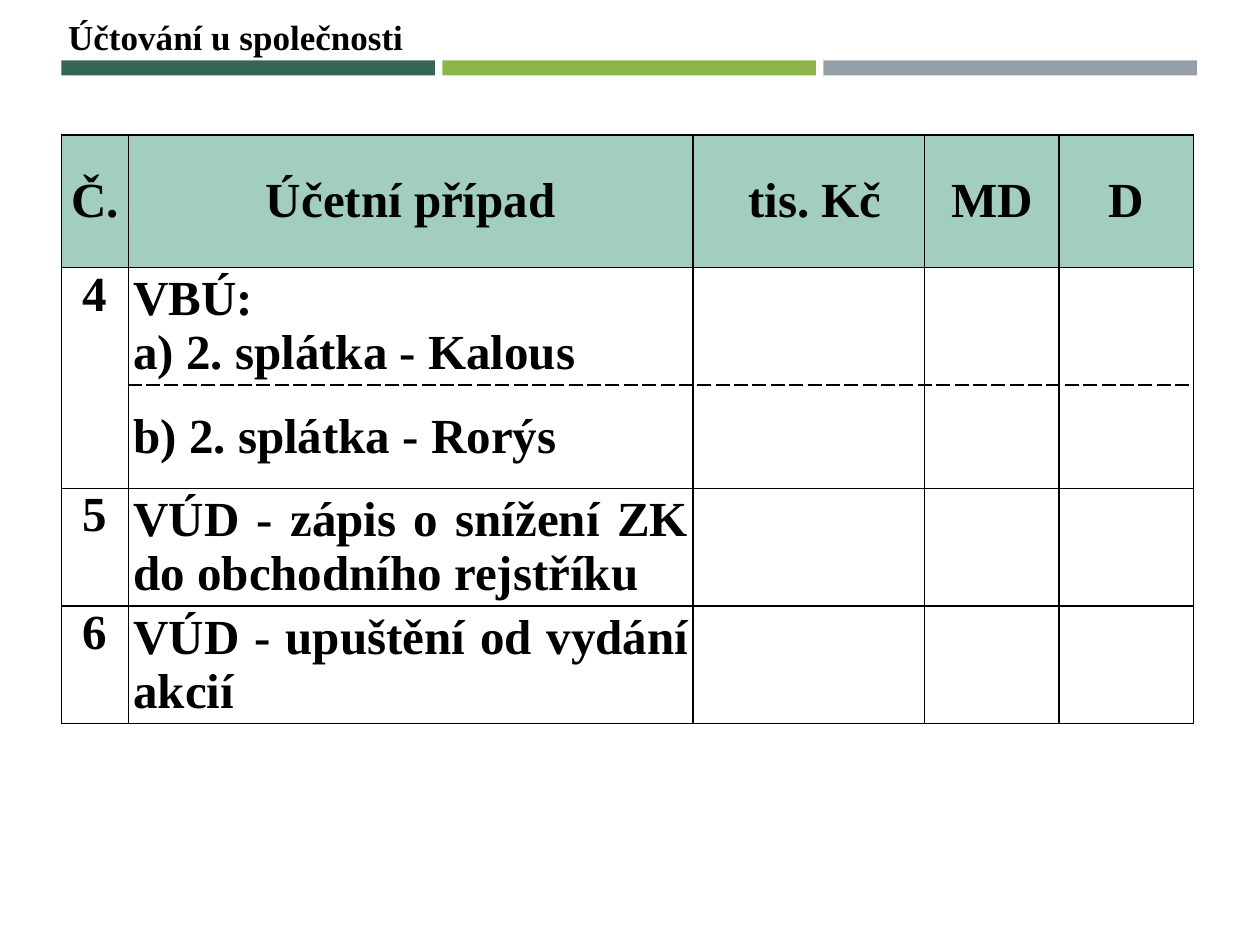
from dataclasses import dataclass
from typing import Optional

from lxml.etree import SubElement
from pptx import Presentation
from pptx.dml.color import RGBColor
from pptx.enum.shapes import MSO_SHAPE as Shape
from pptx.enum.text import MSO_ANCHOR as Anchor, MSO_AUTO_SIZE as AutoSize, PP_ALIGN as Align
from pptx.oxml.ns import qn
from pptx.util import Cm, Pt


@dataclass(frozen=True)
class Theme:
    """Colours, font and type sizes of the page."""
    font: str = "Times New Roman"
    ink: str = "000000"
    header: str = "A2CEC1"
    bars: tuple = ("366658", "8CB64A", "969FA7")
    title_size: int = 20
    table_size: int = 28
    border: int = 1


@dataclass(frozen=True)
class Row:
    """One table row: its height in cm, its texts and its dashed edges."""
    height: float
    texts: tuple
    header: bool = False
    dashed: Optional[str] = None


THEME = Theme()
COLUMNS = (1.35, 11.38, 4.67, 2.71, 2.71)
ROWS = (
    Row(2.67, ("Č.", "Účetní případ", " tis. Kč", "MD", "D"), header=True),
    Row(2.37, ("4", "VBÚ:\na) 2. splátka - Kalous", "", "", ""), dashed="lnB"),
    Row(2.08, ("", "b) 2. splátka - Rorýs", "", "", ""), dashed="lnT"),
    Row(2.37, ("5", "VÚD - zápis o snížení ZK do obchodního rejstříku", "", "", "")),
    Row(2.37, ("6", "VÚD - upuštění od vydání akcií ", "", "", "")),
)
LEFT = 1.24


def style_para(para, size: int, align: Align) -> None:
    """Give a paragraph the bold face of the theme."""
    para.alignment = align
    para.font.name = THEME.font
    para.font.size = Pt(size)
    para.font.bold = True
    para.font.color.rgb = RGBColor.from_string(THEME.ink)


def draw_bars(page) -> None:
    """Draw the row of coloured bars below the title."""
    for index, colour in enumerate(THEME.bars):
        bar = page.shapes.add_shape(
            Shape.RECTANGLE, Cm(LEFT + index * 7.68), Cm(1.22), Cm(7.53), Cm(0.3))
        bar.shadow.inherit = False
        bar.fill.solid()
        bar.fill.fore_color.rgb = RGBColor.from_string(colour)
        bar.line.fill.background()


def write_title(page, text: str) -> None:
    """Place and format the title placeholder."""
    title = page.shapes.title
    title.left, title.top, title.width, title.height = Cm(1.12), Cm(0.18), Cm(7.32), Cm(1.12)
    frame = title.text_frame
    frame.text = text
    frame.word_wrap = False
    frame.auto_size = AutoSize.SHAPE_TO_FIT_TEXT
    frame.vertical_anchor = Anchor.TOP
    style_para(frame.paragraphs[0], THEME.title_size, Align.LEFT)


def draw_borders(cell, dashed: Optional[str]) -> None:
    """Draw the four cell edges, with at most one of them dashed."""
    properties = cell._tc.get_or_add_tcPr()
    for edge in ("lnL", "lnR", "lnT", "lnB"):
        line = SubElement(properties, qn(f"a:{edge}"), w=str(Pt(THEME.border)))
        fill = SubElement(line, qn("a:solidFill"))
        SubElement(fill, qn("a:srgbClr"), val=THEME.ink)
        SubElement(line, qn("a:prstDash"), val="dash" if edge == dashed else "solid")


def fill_cell(cell, row: Row, column: int) -> None:
    """Write and format one table cell."""
    cell.text = row.texts[column]
    cell.margin_left = cell.margin_right = Cm(0.1)
    cell.margin_top = cell.margin_bottom = 0
    numbering = column == 0 and not row.header
    cell.vertical_anchor = Anchor.TOP if numbering else Anchor.MIDDLE
    align = Align.JUSTIFY if column == 1 and not row.header else Align.CENTER
    for para in cell.text_frame.paragraphs:
        style_para(para, THEME.table_size, align)
    draw_borders(cell, row.dashed if column else None)
    if row.header:
        cell.fill.solid()
        cell.fill.fore_color.rgb = RGBColor.from_string(THEME.header)
    else:
        cell.fill.background()


def draw_table(page) -> None:
    """Draw the table of accounting entries."""
    table = page.shapes.add_table(
        len(ROWS), len(COLUMNS), Cm(LEFT), Cm(2.72),
        Cm(sum(COLUMNS)), Cm(sum(row.height for row in ROWS))).table
    table.first_row = table.horz_banding = False
    for column, width in enumerate(COLUMNS):
        table.columns[column].width = Cm(width)
    for index, row in enumerate(ROWS):
        table.rows[index].height = Cm(row.height)
        for column in range(len(COLUMNS)):
            fill_cell(table.cell(index, column), row, column)
    table.cell(1, 0).merge(table.cell(2, 0))


def main() -> None:
    """Build the deck and save it."""
    deck = Presentation()
    deck.slide_width, deck.slide_height = Cm(25.4), Cm(19.05)
    page = deck.slides.add_slide(deck.slide_layouts[5])
    draw_bars(page)
    write_title(page, "Účtování u společnosti")
    draw_table(page)
    deck.save("out.pptx")


if __name__ == "__main__":
    main()
